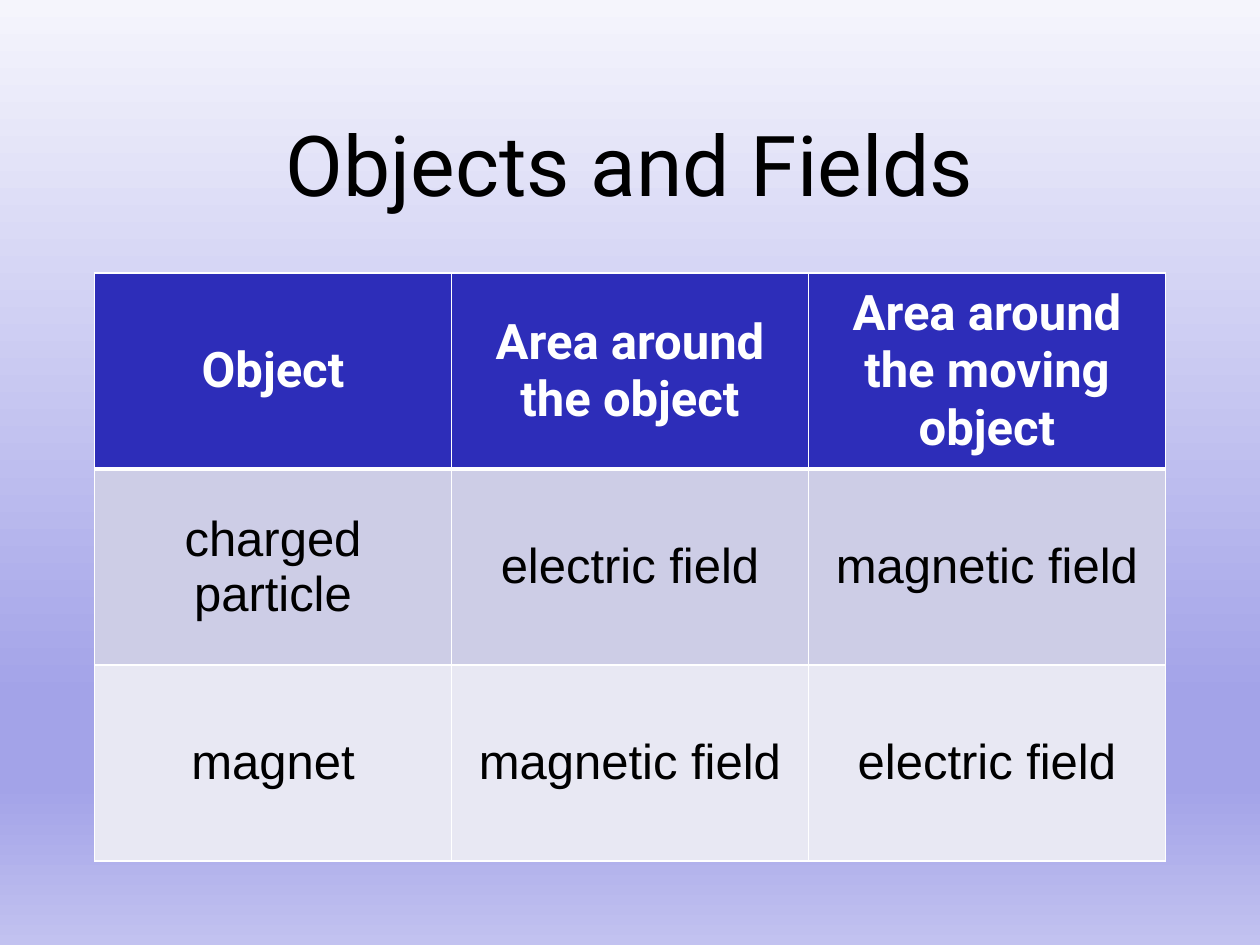
"""Build a slide with a table of objects and the fields around them."""
from lxml.etree import SubElement
from pptx import Presentation
from pptx.dml.color import RGBColor
from pptx.enum.text import MSO_ANCHOR as Anchor, PP_ALIGN as Align
from pptx.oxml.ns import qn
from pptx.util import Pt

COLORS = {
    "black": "000000",
    "white": "FFFFFF",
    "header": "2D2DB9",
    "band_dark": "CDCDE6",
    "band_light": "E8E8F3",
    "sky_top": "F5F5FC",
    "sky_deep": "A3A3E8",
    "sky_bottom": "C2C2F0",
}
SKY_STOPS = [(0, "sky_top"), (74, "sky_deep"), (83, "sky_deep"), (100, "sky_bottom")]
ROWS = [
    ["Object", "Area around the object", "Area around the moving object"],
    ["charged particle", "electric field", "magnetic field"],
    ["magnet", "magnetic field", "electric field"],
]
ROW_FILLS = ["header", "band_dark", "band_light"]
COLUMN_WIDTH, ROW_HEIGHT = 204, 112


def write_text(text_frame, text, *, font="Arial", size=28, color="black", bold=False):
    paragraph = text_frame.paragraphs[0]
    paragraph.alignment = Align.CENTER
    run = paragraph.add_run()
    run.text = text
    run.font.name = font
    run.font.size = Pt(size)
    run.font.bold = bold
    run.font.color.rgb = RGBColor.from_string(COLORS[color])


def paint_background(slide):
    fill = slide.background.fill
    fill.gradient()
    fill.gradient_angle = 270
    stop_list = slide.element.find(".//" + qn("a:gsLst"))
    for stop in list(stop_list):
        stop_list.remove(stop)
    for percent, color in SKY_STOPS:
        stop = SubElement(stop_list, qn("a:gs"), pos=str(percent * 1000))
        SubElement(stop, qn("a:srgbClr"), val=COLORS[color])


def add_title(slide, text):
    title = slide.shapes.title
    title.left, title.top, title.width, title.height = Pt(54), Pt(48), Pt(612), Pt(90)
    title.text_frame.vertical_anchor = Anchor.MIDDLE
    write_text(title.text_frame, text, font="Roboto", size=48)


def set_borders(cell, top, bottom):
    properties = cell._tc.get_or_add_tcPr()
    for side, width in (("L", 1), ("R", 1), ("T", top), ("B", bottom)):
        line = SubElement(properties, qn(f"a:ln{side}"), w=str(Pt(width)))
        fill = SubElement(line, qn("a:solidFill"))
        SubElement(fill, qn("a:srgbClr"), val=COLORS["white"])


def add_field_table(slide):
    row_count, column_count = len(ROWS), len(ROWS[0])
    table = slide.shapes.add_table(
        row_count, column_count, Pt(54), Pt(156),
        Pt(COLUMN_WIDTH * column_count), Pt(ROW_HEIGHT * row_count),
    ).table
    header_format = {"font": "Roboto", "color": "white", "bold": True}
    for row_index, texts in enumerate(ROWS):
        for column_index, text in enumerate(texts):
            cell = table.cell(row_index, column_index)
            set_borders(cell, 3 if row_index == 1 else 1, 3 if row_index == 0 else 1)
            cell.fill.solid()
            cell.fill.fore_color.rgb = RGBColor.from_string(COLORS[ROW_FILLS[row_index]])
            cell.vertical_anchor = Anchor.MIDDLE
            write_text(cell.text_frame, text, **(header_format if row_index == 0 else {}))


def main():
    presentation = Presentation()
    presentation.slide_width, presentation.slide_height = Pt(720), Pt(540)
    slide = presentation.slides.add_slide(presentation.slide_layouts[5])
    paint_background(slide)
    add_title(slide, "Objects and Fields")
    add_field_table(slide)
    presentation.save("out.pptx")


if __name__ == "__main__":
    main()
